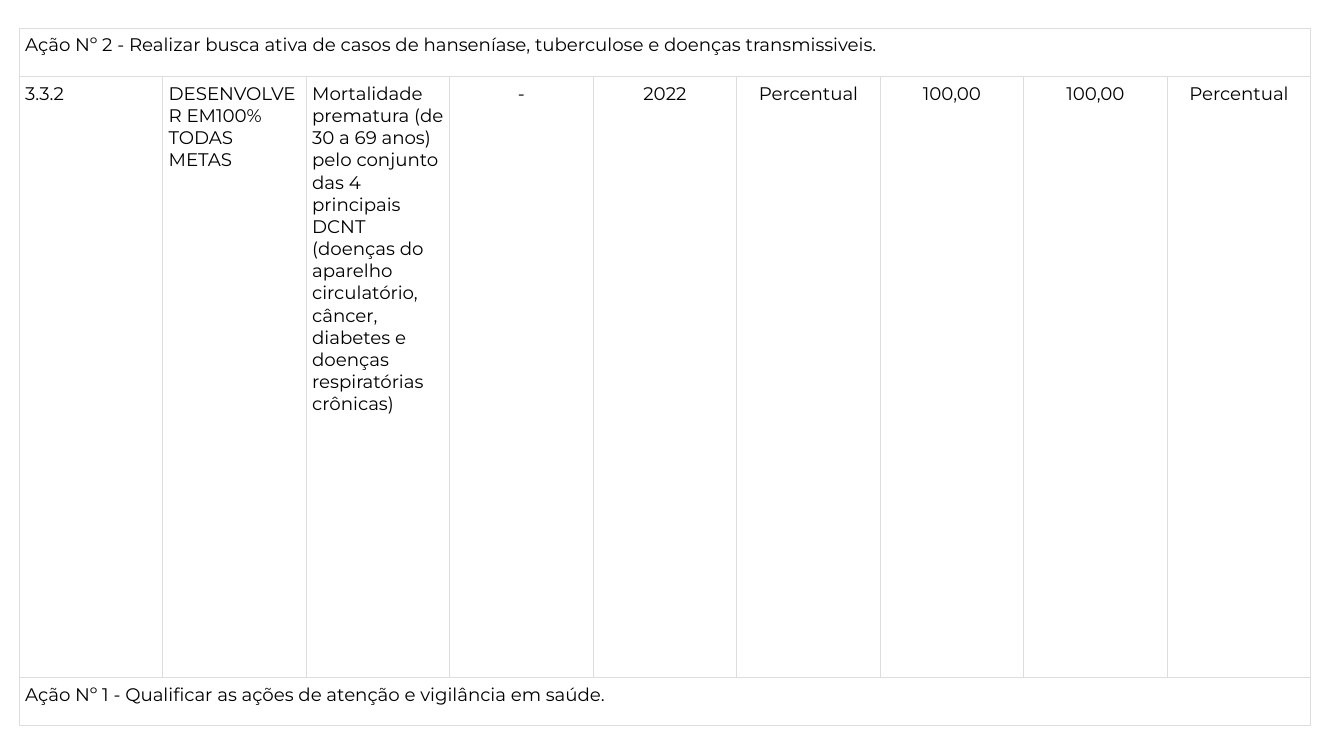
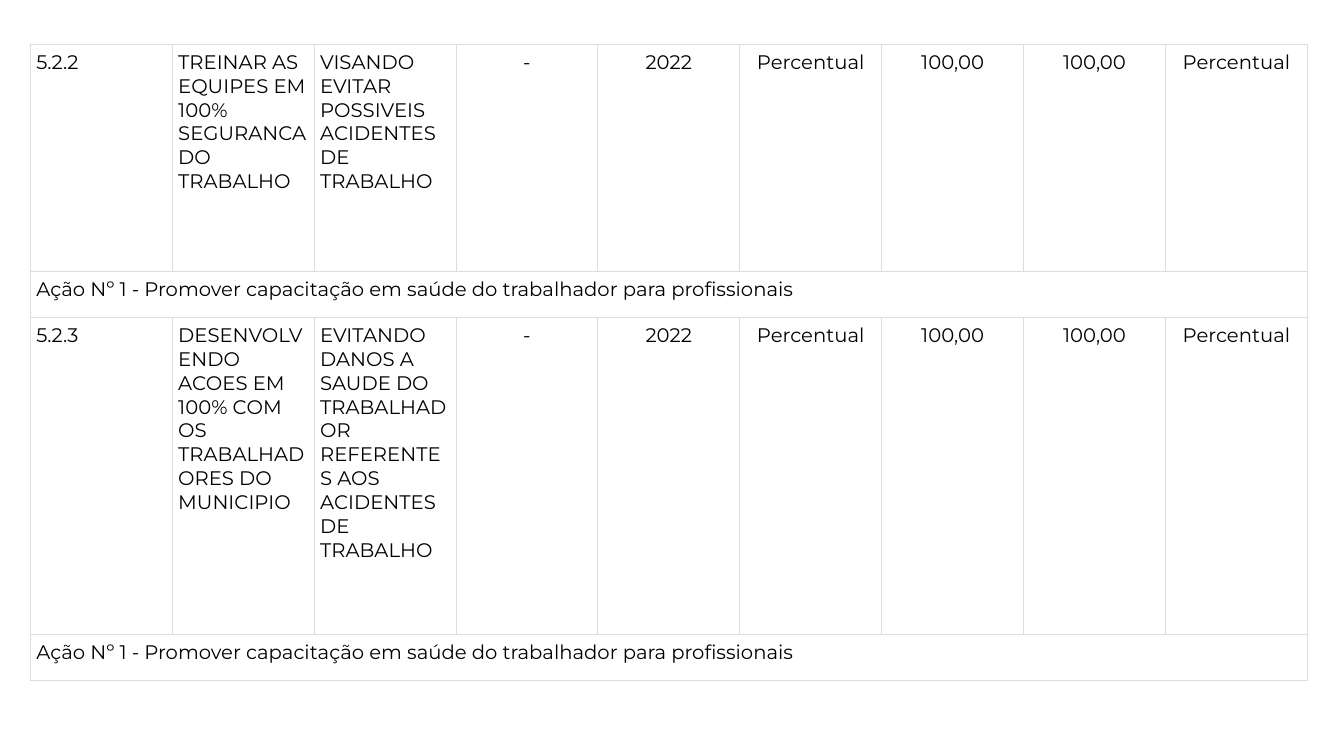
import lxml.etree
import pptx
import pptx.dml.color
import pptx.enum.text
import pptx.oxml.ns
import pptx.util

Inches = pptx.util.Inches
BLACK = pptx.dml.color.RGBColor(0x00, 0x00, 0x00)
WHITE = pptx.dml.color.RGBColor(0xFF, 0xFF, 0xFF)
GRID_GREY = pptx.dml.color.RGBColor(0xDD, 0xDD, 0xDD)
FONT = "Montserrat"
CELL_MARGIN = Inches(0.06)
GRID_WIDTH = pptx.util.Pt(0.75)
COLUMN_COUNT = 9
FIRST_CENTRED = 3
ANNUAL_TARGET = ("-", "2022", "Percentual", "100,00", "100,00", "Percentual")
TRAINING_ACTION = ("Ação Nº 1 - Promover capacitação em saúde do trabalhador "
                   "para profissionais",)

HEALTH_GOALS = [
    (0.48, ("Ação Nº 2 - Realizar busca ativa de casos de hanseníase, "
            "tuberculose e doenças transmissiveis.",)),
    (5.96, ("3.3.2", "DESENVOLVER EM100% TODAS METAS",
            "Mortalidade prematura (de 30 a 69 anos) pelo conjunto das 4 "
            "principais DCNT (doenças do aparelho circulatório, câncer, "
            "diabetes e doenças respiratórias crônicas)") + ANNUAL_TARGET),
    (0.48, ("Ação Nº 1 - Qualificar as ações de atenção e vigilância em saúde.",)),
]
WORKER_GOALS = [
    (2.25, ("5.2.2", "TREINAR AS EQUIPES EM 100% SEGURANCA DO TRABALHO",
            "VISANDO EVITAR POSSIVEIS ACIDENTES DE TRABALHO") + ANNUAL_TARGET),
    (0.46, TRAINING_ACTION),
    (3.14, ("5.2.3",
            "DESENVOLVENDO ACOES EM 100% COM OS TRABALHADORES DO MUNICIPIO",
            "EVITANDO DANOS A SAUDE DO TRABALHADOR REFERENTES AOS ACIDENTES "
            "DE TRABALHO") + ANNUAL_TARGET),
    (0.46, TRAINING_ACTION),
]


def draw_borders(cell):
    """Draw a thin grey line on all four sides of a cell."""
    qn = pptx.oxml.ns.qn
    properties = cell._tc.get_or_add_tcPr()
    for side in ("a:lnL", "a:lnR", "a:lnT", "a:lnB"):
        line = lxml.etree.SubElement(properties, qn(side), w=str(GRID_WIDTH))
        paint = lxml.etree.SubElement(line, qn("a:solidFill"))
        lxml.etree.SubElement(paint, qn("a:srgbClr"), val=str(GRID_GREY))


def style_cell(cell):
    """Give a cell its borders, white fill and margins."""
    draw_borders(cell)
    cell.fill.solid()
    cell.fill.fore_color.rgb = WHITE
    cell.margin_left = cell.margin_right = CELL_MARGIN
    cell.margin_top = cell.margin_bottom = CELL_MARGIN


def write_cell(cell, text, size, centred):
    """Write the text of a cell in the shared typeface."""
    paragraph = cell.text_frame.paragraphs[0]
    paragraph.text = text
    align = pptx.enum.text.PP_ALIGN
    paragraph.alignment = align.CENTER if centred else align.LEFT
    font = paragraph.runs[0].font
    font.name = FONT
    font.size = pptx.util.Pt(size)
    font.color.rgb = BLACK


def add_goal_table(slide, left, top, width, size, goals):
    """Add a table of goals in which a lone text spans the whole row."""
    height = sum(row_height for row_height, _ in goals)
    table = slide.shapes.add_table(
        len(goals), COLUMN_COUNT, Inches(left), Inches(top),
        Inches(width), Inches(height)).table
    table.first_row = table.horz_banding = False
    for column in table.columns:
        column.width = Inches(width / COLUMN_COUNT)
    for cell in table.iter_cells():
        style_cell(cell)
    for row, (row_height, texts) in enumerate(goals):
        table.rows[row].height = Inches(row_height)
        if len(texts) == 1:
            table.cell(row, 0).merge(table.cell(row, COLUMN_COUNT - 1))
        for column, text in enumerate(texts):
            write_cell(table.cell(row, column), text, size,
                       column >= FIRST_CENTRED)


def main():
    """Build both slides and save the presentation."""
    deck = pptx.Presentation()
    deck.slide_width = Inches(13.33)
    deck.slide_height = Inches(7.5)
    blank = deck.slide_layouts[6]
    add_goal_table(deck.slides.add_slide(blank), 0.19, 0.28, 12.81, 13,
                   HEALTH_GOALS)
    add_goal_table(deck.slides.add_slide(blank), 0.3, 0.44, 12.67, 14,
                   WORKER_GOALS)
    deck.save("out.pptx")


if __name__ == "__main__":
    main()
